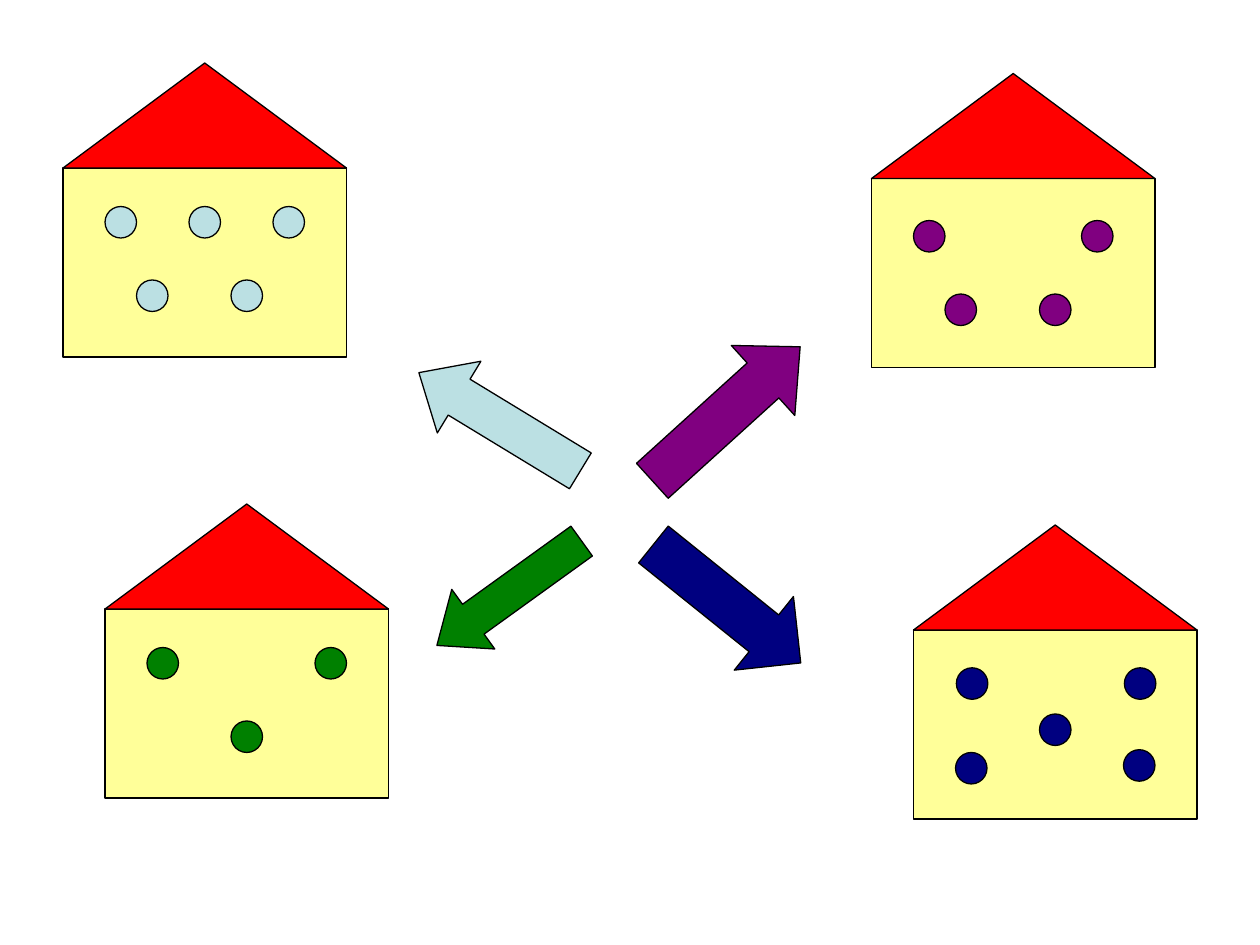
from pptx import Presentation
from pptx.dml.color import RGBColor
from pptx.enum.shapes import MSO_SHAPE
from pptx.util import Pt

RECT = MSO_SHAPE.RECTANGLE
ROOF = MSO_SHAPE.FLOWCHART_EXTRACT
OVAL = MSO_SHAPE.OVAL
ARROW = MSO_SHAPE.RIGHT_ARROW

# Sizes in points
HOUSE_W, WALL_H, ROOF_H, WINDOW = 162, 108, 60, 18

BLACK, YELLOW, RED = "000000", "FFFF99", "FF0000"
PURPLE, NAVY, PALE_BLUE, GREEN = "800080", "000080", "BBE0E3", "008000"

# Left, top, window colour, grouped, window offsets from the wall's corner
HOUSES = [
    (498, 42, PURPLE, False,
     [(24, 24), (120, 24), (96, 66), (42, 66)]),
    (522, 300, NAVY, False,
     [(24.5, 21.6), (72, 48), (120.5, 21.6), (120, 68.4), (24, 70)]),
    (36, 36, PALE_BLUE, True,
     [(24, 22), (72, 22), (120, 22), (96, 64), (42, 64)]),
    (60, 288, GREEN, True,
     [(24, 22), (120, 22), (72, 64)]),
]

# Left, top, width, height, rotation, head length ratio, colour
ARROWS = [
    (231.5, 217, 108, 48, 211.3, 0.56, PALE_BLUE),
    (358, 209.5, 114, 54, 317.8, 0.53, PURPLE),
    (361.5, 318, 108, 54, 38.8, 0.5, NAVY),
    (240, 318, 102, 42, 144.2, 0.61, GREEN),
]


def color(hex_string):
    return RGBColor.from_string(hex_string)


def add_outlined(shapes, kind, left, top, width, height, fill):
    """Add a filled preset shape with a thin black outline."""
    sp = shapes.add_shape(kind, Pt(left), Pt(top), Pt(width), Pt(height))
    sp.shadow.inherit = False
    sp.fill.solid()
    sp.fill.fore_color.rgb = color(fill)
    sp.line.color.rgb = color(BLACK)
    sp.line.width = Pt(0.75)
    return sp


def add_house(shapes, left, top, window_fill, windows):
    wall_top = top + ROOF_H
    add_outlined(shapes, RECT, left, wall_top, HOUSE_W, WALL_H, YELLOW)
    add_outlined(shapes, ROOF, left, top, HOUSE_W, ROOF_H, RED)
    for dx, dy in windows:
        add_outlined(shapes, OVAL, left + dx, wall_top + dy,
                     WINDOW, WINDOW, window_fill)


def add_arrow(shapes, left, top, width, height, rotation, head, fill):
    sp = add_outlined(shapes, ARROW, left, top, width, height, fill)
    sp.adjustments[0] = 0.5
    sp.adjustments[1] = head
    sp.rotation = rotation


def main():
    prs = Presentation()
    prs.slide_width, prs.slide_height = Pt(720), Pt(540)
    s = prs.slides.add_slide(prs.slide_layouts[6])

    # Houses with their windows
    for left, top, fill, grouped, windows in HOUSES:
        shapes = s.shapes.add_group_shape().shapes if grouped else s.shapes
        add_house(shapes, left, top, fill, windows)

    # Arrows pointing from the centre to the houses
    for arrow in ARROWS:
        add_arrow(s.shapes, *arrow)

    prs.save("out.pptx")


if __name__ == "__main__":
    main()
